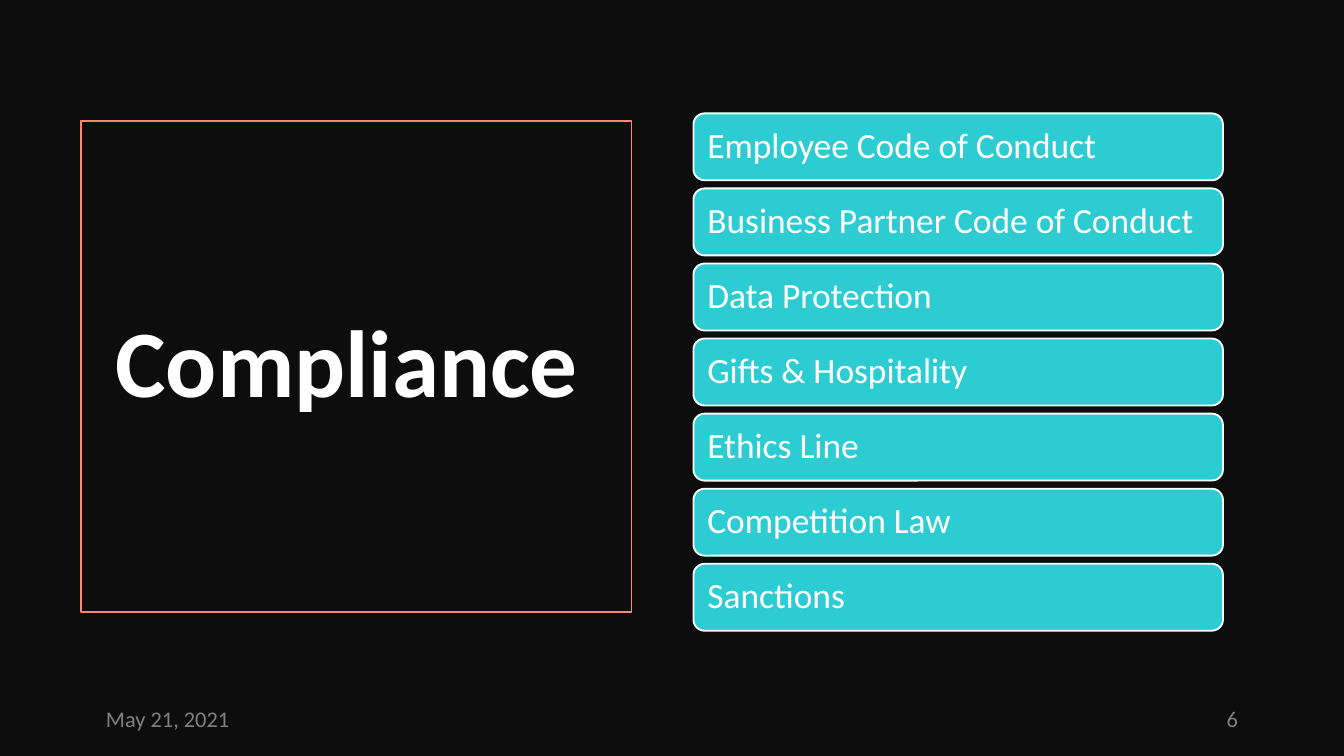
from pptx import Presentation
from pptx import util as u
from pptx.dml.color import RGBColor
from pptx.enum import shapes, text

BLACK = RGBColor(0x0D, 0x0D, 0x0D)
WHITE = RGBColor(0xFF, 0xFF, 0xFF)
CORAL = RGBColor(0xFF, 0x86, 0x74)
TURQUOISE = RGBColor(0x2D, 0xCC, 0xD3)
GREY = RGBColor(0x80, 0x80, 0x80)
FONT = "Calibri"

WIDTH = 10
HEIGHT = WIDTH * 9 / 16
TOPICS = [
    "Employee Code of Conduct",
    "Business Partner Code of Conduct",
    "Data Protection",
    "Gifts & Hospitality",
    "Ethics Line",
    "Competition Law",
    "Sanctions",
]


def inches(*lengths):
    return [u.Inches(length) for length in lengths]


def write(shape, wording, size, colour, bold=False,
          align=text.PP_ALIGN.LEFT, side=0.1):
    """Write one vertically centred line into a shape."""
    frame = shape.text_frame
    frame.word_wrap = True
    frame.auto_size = text.MSO_AUTO_SIZE.NONE
    frame.vertical_anchor = text.MSO_ANCHOR.MIDDLE
    frame.margin_left, frame.margin_right = inches(side, side)
    frame.margin_top, frame.margin_bottom = inches(0.05, 0.05)
    para = frame.paragraphs[0]
    para.alignment = align
    para.line_spacing = 0.9
    span = para.add_run()
    span.text = wording
    span.font.name = FONT
    span.font.size = u.Pt(size)
    span.font.bold = bold
    span.font.color.rgb = colour


def add_block(page, kind, box, fill=None, line=None):
    shape = page.shapes.add_shape(kind, *inches(*box))
    shape.shadow.inherit = False
    if fill is None:
        shape.fill.background()
    else:
        shape.fill.solid()
        shape.fill.fore_color.rgb = fill
    if line is None:
        shape.line.fill.background()
    else:
        shape.line.color.rgb = line
        shape.line.width = u.Pt(1)
    return shape


def add_backdrop(page, box):
    """Dark sheet, placed behind the title."""
    sheet = add_block(page, shapes.MSO_SHAPE.RECTANGLE, box, fill=BLACK)
    page.shapes.title.element.addprevious(sheet.element)


def add_title_panel(page, box):
    """Framed title, with the placeholder inset in its frame."""
    left, top, width, height = box
    pad_x, pad_y = 0.16, 0.13
    title = page.shapes.title
    title.left, title.top, title.width, title.height = inches(
        left + pad_x, top + pad_y, width - 2 * pad_x, height - 2 * pad_y)
    write(title, "Compliance", 51, WHITE, bold=True)
    add_block(page, shapes.MSO_SHAPE.RECTANGLE, box, line=CORAL)


def add_topic_list(page, box):
    """Equal rounded bars stacked down the box."""
    left, top, width, height = box
    gap = 0.06
    pitch = (height + gap) / len(TOPICS)
    for row, topic in enumerate(TOPICS):
        bar = add_block(page, shapes.MSO_SHAPE.ROUNDED_RECTANGLE,
                        (left, top + row * pitch, width, pitch - gap),
                        fill=TURQUOISE, line=WHITE)
        write(bar, topic, 19, WHITE, side=0.08)


def add_footer(page, box):
    """Date at the left end and page number at the right end."""
    left, top, width, height = box
    field = 2.25
    for start, wording, align in (
            (left, "May 21, 2021", text.PP_ALIGN.LEFT),
            (left + width - field, "6", text.PP_ALIGN.RIGHT)):
        note = page.shapes.add_textbox(*inches(start, top, field, height))
        write(note, wording, 12, GREY, align=align)


def main():
    deck = Presentation()
    deck.slide_width, deck.slide_height = inches(WIDTH, HEIGHT)
    page = deck.slides.add_slide(deck.slide_layouts.get_by_name("Title Only"))

    add_backdrop(page, (0, 0, WIDTH, HEIGHT))
    add_title_panel(page, (0.06 * WIDTH, 0.16 * HEIGHT, 0.41 * WIDTH, 0.65 * HEIGHT))
    add_topic_list(page, (5.16, 0.15 * HEIGHT, 3.94, 3.85))
    add_footer(page, (0.69, 5.21, 8.62, 0.3))
    deck.save("out.pptx")


if __name__ == "__main__":
    main()
